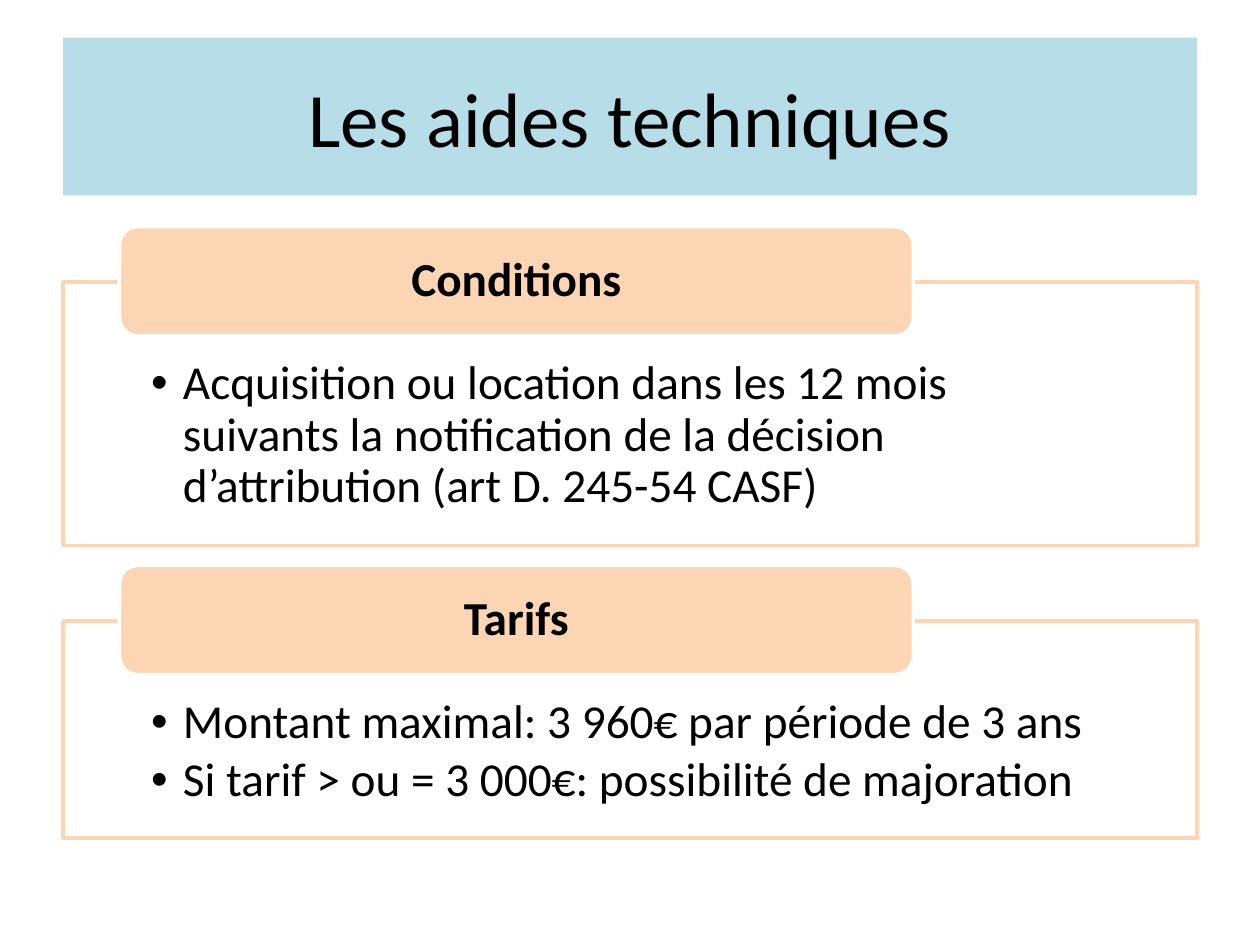
from dataclasses import dataclass

from lxml.etree import SubElement
from pptx import Presentation
from pptx.dml.color import RGBColor
from pptx.enum.shapes import MSO_SHAPE
from pptx.enum.text import MSO_ANCHOR, PP_ALIGN
from pptx.oxml.ns import qn
from pptx.shapes.autoshape import Shape
from pptx.slide import Slide
from pptx.util import Cm, Pt


@dataclass(frozen=True)
class Theme:
    font: str = "Calibri"
    title_size: float = 44
    body_size: float = 27
    line_width: float = 2
    ink: RGBColor = RGBColor(0x00, 0x00, 0x00)
    paper: RGBColor = RGBColor(0xFF, 0xFF, 0xFF)
    banner: RGBColor = RGBColor(0xB7, 0xDE, 0xE8)
    accent: RGBColor = RGBColor(0xFC, 0xD5, 0xB5)


@dataclass(frozen=True)
class Section:
    heading: str
    points: tuple[str, ...]
    top: float
    height: float


THEME = Theme()
LEFT, WIDTH = 1.27, 22.86
TAB_LEFT, TAB_WIDTH, TAB_HEIGHT = 2.41, 16.0, 2.2
TAB_RISE = 1.12
SECTIONS = (
    Section("Conditions",
            ("Acquisition ou location dans les 12 mois suivants la notification "
             "de la décision d’attribution (art D. 245-54 CASF)",),
            5.69, 5.31),
    Section("Tarifs",
            ("Montant maximal: 3 960€ par période de 3 ans",
             "Si tarif > ou = 3 000€: possibilité de majoration"),
            12.52, 4.37),
)


def set_attributes(target: object, values: dict) -> None:
    for name, value in values.items():
        setattr(target, name, value)


def format_font(font: object, size: float, bold: bool = False) -> None:
    set_attributes(font, {"name": THEME.font, "size": Pt(size), "bold": bold})
    font.color.rgb = THEME.ink


def add_box(slide: Slide, kind: MSO_SHAPE, box: tuple[float, ...],
            fill: RGBColor, line: RGBColor) -> Shape:
    shape = slide.shapes.add_shape(kind, *(Cm(length) for length in box))
    shape.shadow.inherit = False
    shape.fill.solid()
    shape.fill.fore_color.rgb = fill
    shape.line.color.rgb = line
    shape.line.width = Pt(THEME.line_width)
    return shape


def write_paragraphs(shape: Shape, texts: tuple[str, ...], frame_format: dict,
                     paragraph_format: dict, bold: bool = False) -> None:
    frame = shape.text_frame
    set_attributes(frame, {"word_wrap": True, **frame_format})
    frame.text = "\n".join(texts)
    for paragraph in frame.paragraphs:
        set_attributes(paragraph, {"line_spacing": 0.9, **paragraph_format})
        format_font(paragraph.runs[0].font, THEME.body_size, bold)


def add_bullets(shape: Shape) -> None:
    """Give each paragraph a round bullet with a hanging indent."""
    for paragraph in shape.text_frame.paragraphs:
        properties = paragraph._p.get_or_add_pPr()
        properties.set("marL", str(Cm(0.64)))
        properties.set("indent", str(-Cm(0.64)))
        SubElement(properties, qn("a:buFont")).set("typeface", "Arial")
        SubElement(properties, qn("a:buChar")).set("char", "•")


def add_section(slide: Slide, section: Section) -> None:
    panel = add_box(slide, MSO_SHAPE.RECTANGLE,
                    (LEFT, section.top, WIDTH, section.height),
                    THEME.paper, THEME.accent)
    write_paragraphs(panel, section.points,
                     {"vertical_anchor": MSO_ANCHOR.TOP,
                      "margin_left": Cm(1.78), "margin_right": Cm(1.78),
                      "margin_top": Cm(1.55), "margin_bottom": Cm(0.53)},
                     {"level": 1, "alignment": PP_ALIGN.LEFT, "space_after": Pt(4)})
    add_bullets(panel)

    tab = add_box(slide, MSO_SHAPE.ROUNDED_RECTANGLE,
                  (TAB_LEFT, section.top - TAB_RISE, TAB_WIDTH, TAB_HEIGHT),
                  THEME.accent, THEME.paper)
    write_paragraphs(tab, (section.heading,),
                     {"vertical_anchor": MSO_ANCHOR.MIDDLE,
                      "margin_left": Cm(0.6), "margin_right": Cm(0.6),
                      "margin_top": 0, "margin_bottom": 0},
                     {"alignment": PP_ALIGN.CENTER}, bold=True)


def format_title(slide: Slide) -> None:
    title = slide.shapes.title
    set_attributes(title, {"left": Cm(LEFT), "top": Cm(0.76),
                           "width": Cm(WIDTH), "height": Cm(3.18)})
    title.fill.solid()
    title.fill.fore_color.rgb = THEME.banner
    title.text_frame.text = "Les aides techniques"
    title.text_frame.vertical_anchor = MSO_ANCHOR.MIDDLE
    paragraph = title.text_frame.paragraphs[0]
    paragraph.alignment = PP_ALIGN.CENTER
    format_font(paragraph.runs[0].font, THEME.title_size)


def main() -> None:
    presentation = Presentation()
    set_attributes(presentation, {"slide_width": Cm(25.4), "slide_height": Cm(19.05)})
    slide = presentation.slides.add_slide(presentation.slide_layouts[5])
    format_title(slide)
    for section in SECTIONS:
        add_section(slide, section)
    presentation.save("out.pptx")


if __name__ == "__main__":
    main()
